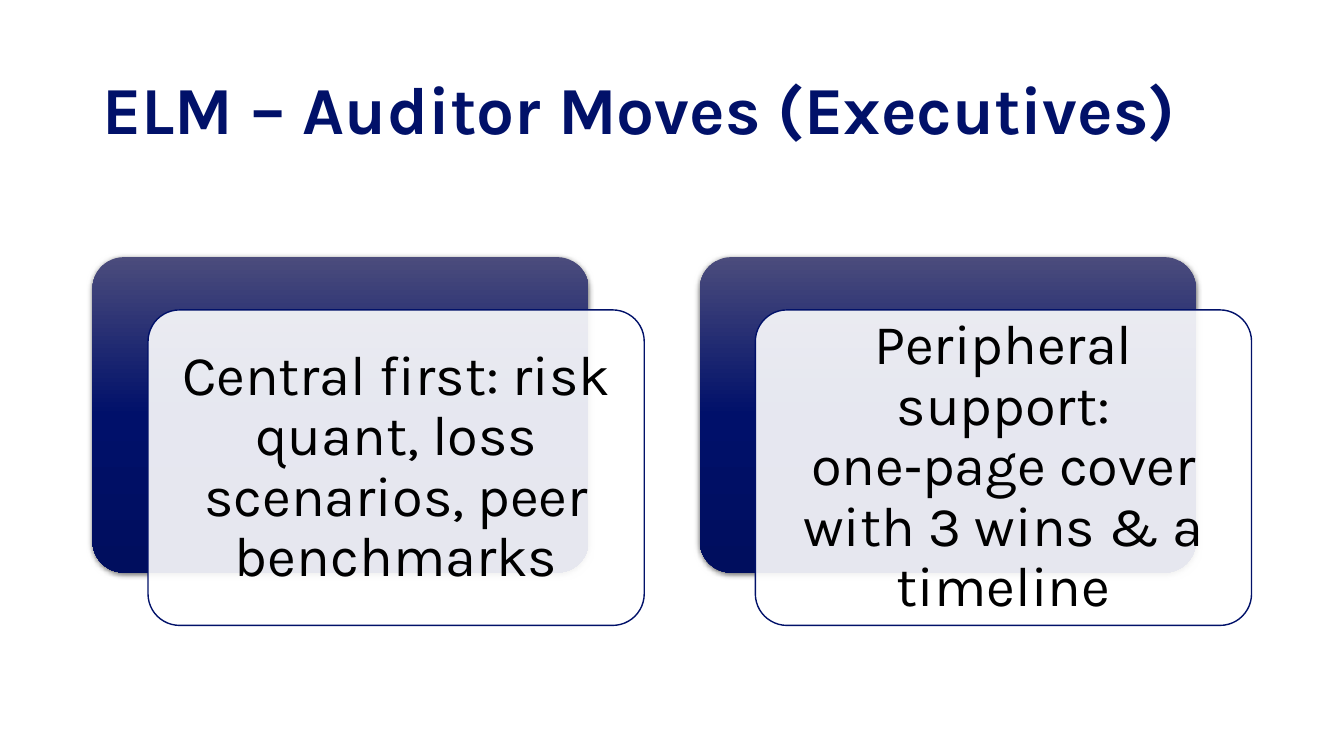
from dataclasses import dataclass

from lxml.etree import SubElement
from pptx import Presentation
from pptx.dml.color import RGBColor
from pptx.enum.shapes import MSO_SHAPE
from pptx.enum.text import MSO_ANCHOR, MSO_AUTO_SIZE, PP_ALIGN
from pptx.oxml.ns import qn
from pptx.util import Cm, Pt


@dataclass(frozen=True)
class Theme:
    font: str = "Karla"
    navy: str = "011169"
    white: str = "FFFFFF"
    black: str = "000000"
    gradient: tuple = ((0, "4B4C7C"), (50, "00106A"), (100, "000E5E"))
    title_size: int = 48
    card_size: int = 40
    line_spacing: float = 0.9


@dataclass(frozen=True)
class Box:
    left: float
    top: float
    width: float
    height: float

    def lengths(self):
        return [Cm(value) for value in (self.left, self.top, self.width, self.height)]


THEME = Theme()
TITLE = "ELM – Auditor Moves (Executives)"
MOVES = (
    "Central first: risk quant, loss scenarios, peer benchmarks",
    "Peripheral support: one‑page cover with 3 wins & a timeline",
)


def apply_format(target, values):
    for name, value in values.items():
        setattr(target, name, value)


def write_text(shape, text, alignment, size, color, bold, inset):
    frame = shape.text_frame
    frame.text = text
    apply_format(frame, {
        "word_wrap": True,
        "auto_size": MSO_AUTO_SIZE.NONE,
        "vertical_anchor": MSO_ANCHOR.MIDDLE,
        **{f"margin_{side}": Cm(inset) for side in ("left", "right", "top", "bottom")},
    })
    paragraph = frame.paragraphs[0]
    apply_format(paragraph, {
        "alignment": alignment,
        "line_spacing": THEME.line_spacing,
        "space_before": Pt(0),
    })
    font = paragraph.runs[0].font
    apply_format(font, {"name": THEME.font, "size": Pt(size), "bold": bold})
    font.color.rgb = RGBColor.from_string(color)


def add_title(slide, box):
    title = slide.shapes.title
    names = ("left", "top", "width", "height")
    apply_format(title, dict(zip(names, box.lengths())))
    write_text(title, TITLE, PP_ALIGN.LEFT, THEME.title_size, THEME.navy, True, 0.25)


def add_color(parent, color, alpha=None):
    element = SubElement(parent, qn("a:srgbClr"), val=color)
    if alpha is not None:
        SubElement(element, qn("a:alpha"), val=str(alpha * 1000))


def add_rounded(slide, box):
    shape = slide.shapes.add_shape(MSO_SHAPE.ROUNDED_RECTANGLE, *box.lengths())
    shape.adjustments[0] = 0.1
    shape.shadow.inherit = False
    return shape


def add_back_plate(slide, box):
    plate = add_rounded(slide, box)
    plate.line.fill.background()
    plate.fill.gradient()
    plate.fill.gradient_angle = 270
    properties = plate.element.spPr
    stops = properties.find(f".//{qn('a:gsLst')}")
    for stop in list(stops):
        stops.remove(stop)
    for position, color in THEME.gradient:
        stop = SubElement(stops, qn("a:gs"), pos=str(position * 1000))
        add_color(stop, color)
    shadow = SubElement(
        properties.find(qn("a:effectLst")), qn("a:outerShdw"),
        blurRad=str(Pt(4.5)), dist=str(Pt(1.5)), dir="5400000",
        algn="ctr", rotWithShape="0",
    )
    add_color(shadow, THEME.black, 63)


def add_front_card(slide, box, text):
    card = add_rounded(slide, box)
    card.fill.solid()
    card.fill.fore_color.rgb = RGBColor.from_string(THEME.white)
    color = card.element.spPr.find(f"{qn('a:solidFill')}/{qn('a:srgbClr')}")
    SubElement(color, qn("a:alpha"), val="90000")
    card.line.color.rgb = RGBColor.from_string(THEME.navy)
    card.line.width = Pt(1)
    write_text(card, text, PP_ALIGN.CENTER, THEME.card_size, THEME.black, False, 0.42)


def add_move(slide, box, text):
    shift_x, shift_y = 1.4, 1.33
    width, height = box.width - shift_x, box.height - shift_y
    add_back_plate(slide, Box(box.left, box.top, width, height))
    add_front_card(slide, Box(box.left + shift_x, box.top + shift_y, width, height), text)


def add_moves(slide, box):
    gap = 1.4
    width = (box.width - gap * (len(MOVES) - 1)) / len(MOVES)
    for index, text in enumerate(MOVES):
        left = box.left + index * (width + gap)
        add_move(slide, Box(left, box.top, width, box.height), text)


def main():
    presentation = Presentation()
    apply_format(presentation, {"slide_width": Cm(33.87), "slide_height": Cm(19.05)})
    slide = presentation.slides.add_slide(presentation.slide_layouts[5])
    add_title(slide, Box(2.33, 1.01, 29.21, 3.68))
    add_moves(slide, Box(2.33, 6.48, 29.21, 9.28))
    presentation.save("out.pptx")


if __name__ == "__main__":
    main()
